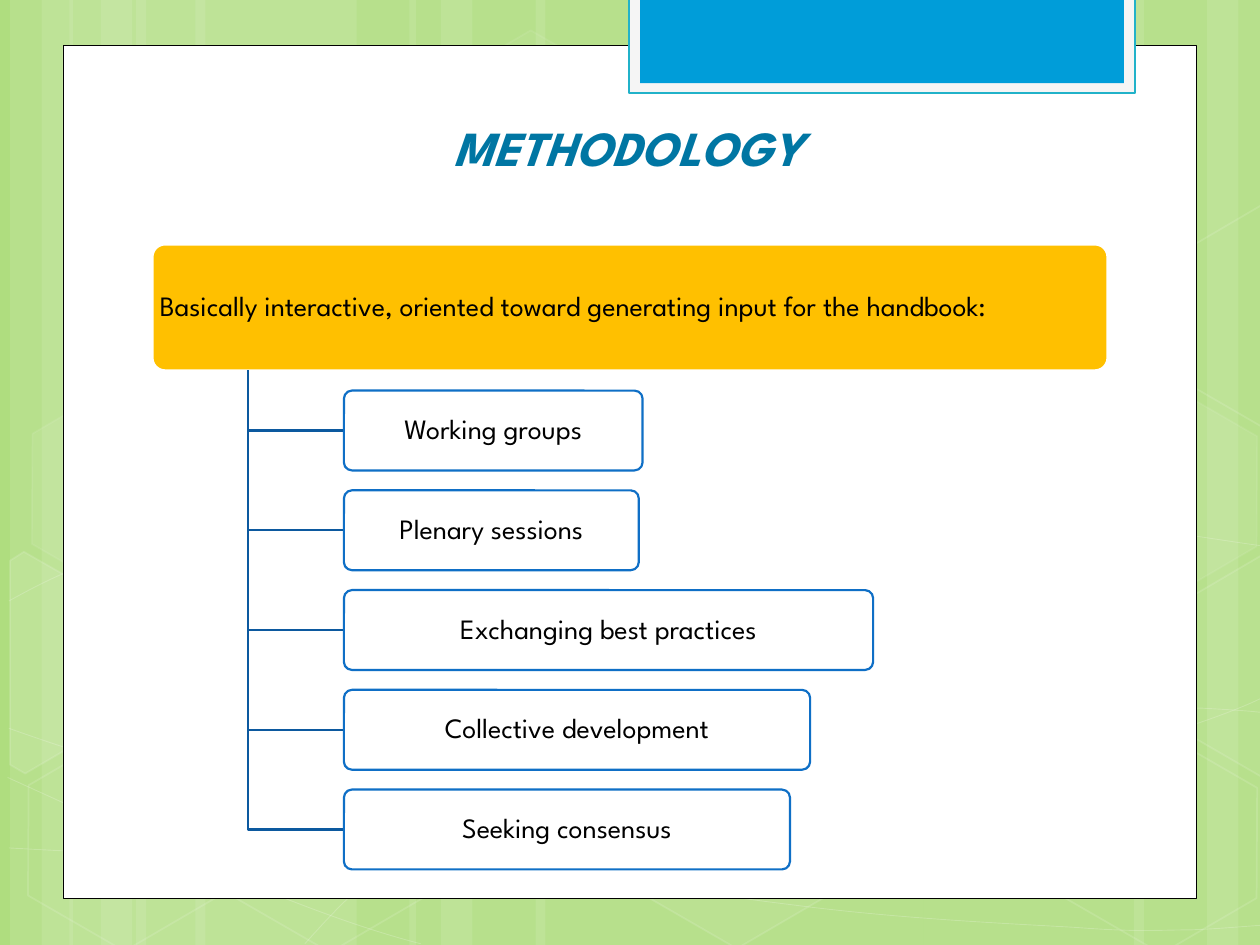
import pptx
import pptx.util
import pptx.dml.color
import pptx.enum.shapes
import pptx.enum.text
import pptx.oxml
import pptx.oxml.ns

Inches, Pt = pptx.util.Inches, pptx.util.Pt
RGB = pptx.dml.color.RGBColor.from_string
KIND = pptx.enum.shapes.MSO_SHAPE
ALIGN = pptx.enum.text.PP_ALIGN
ANCHOR = pptx.enum.text.MSO_ANCHOR
qn, nsdecls = pptx.oxml.ns.qn, pptx.oxml.ns.nsdecls

THEME = {
    "font": "League Spartan", "title_size": 28, "text_size": 16,
    "back": "AFDD7F", "white": "FFFFFF", "black": "000000",
    "tab": "F5F5F5", "tab_line": "21B2C9", "blue": "009DD9",
    "title": "0076A3", "gold": "FFC000", "edge": "0F6FC6", "link": "0C599F",
}


def paint(shape, fill=None, line=None, width=1, clear=(100, 100)):
    """Set fill and line by theme name; clear holds both opacities in percent."""
    shape.shadow.inherit = False
    for part, name, alpha in zip((shape.fill, shape.line.fill), (fill, line), clear):
        if name is None:
            part.background()
            continue
        part.solid()
        part.fore_color.rgb = RGB(THEME[name])
        if alpha < 100:
            color = part._xPr.find(qn("a:solidFill"))[0]
            color.append(pptx.oxml.parse_xml(
                f'<a:alpha {nsdecls("a")} val="{alpha * 1000}"/>'))
    if line:
        shape.line.width = Pt(width)


def trace(points, close=False):
    """Draw an outline through points given in inches."""
    spots = [(Inches(x), Inches(y)) for x, y in points]
    pen = shapes.build_freeform(*spots[0], scale=1.0)
    pen.add_line_segments(spots[1:], close=close)
    return pen.convert_to_shape()


deck = pptx.Presentation()
deck.slide_width, deck.slide_height = Inches(10), Inches(7.5)
slide = deck.slides.add_slide(deck.slide_layouts[5])
shapes = slide.shapes
slide.background.fill.solid()
slide.background.fill.fore_color.rgb = RGB(THEME["back"])

# Pale vertical bands: left, width
bands = [(1.08, 1.75), (0.08, 0.5), (0.33, 0.83), (1.55, 1.75), (0.55, 0.5),
         (0.8, 0.83), (7.33, 1.75), (9.58, 0.5), (9, 0.83), (4.25, 3.08),
         (3.25, 0.5), (3.5, 0.83)]
for left, width in bands:
    band = shapes.add_shape(KIND.RECTANGLE, Inches(left), 0, Inches(width), Inches(7.5))
    paint(band, "white", clear=(10, 100))

# Thin waves: a start point, then Bezier control points in threes
waves = [
    [(0.07, 6.73), (0.61, 6.76), (1.15, 6.79), (1.9, 6.78), (2.65, 6.77), (3.58, 6.75),
     (4.58, 6.65), (5.58, 6.55), (7, 6.36), (7.92, 6.17), (8.83, 5.98), (9.77, 5.68),
     (10.07, 5.51)],
    [(0.07, 4.77), (0.36, 4.61), (0.65, 4.46), (1.21, 4.31), (1.78, 4.16), (2.59, 3.94),
     (3.47, 3.87), (4.36, 3.8), (5.44, 3.79), (6.54, 3.87), (7.64, 3.95), (9.47, 4.26),
     (10.07, 4.34)],
    [(0.06, 6.17), (1.27, 6.72), (2.47, 7.27), (3.34, 7.49)],
    [(0.07, 5.78), (0.38, 5.89), (0.7, 6), (1.28, 6.16), (1.86, 6.31), (2.73, 6.56),
     (3.57, 6.73), (4.4, 6.9), (5.45, 7.08), (6.28, 7.18), (7.11, 7.29), (8, 7.33),
     (8.53, 7.36), (9.05, 7.4), (9.19, 7.38), (9.45, 7.38), (9.71, 7.37), (9.89, 7.35),
     (10.07, 7.34)],
    [(2.42, 7.49), (2.6, 7.29), (2.78, 7.09), (3.02, 6.91), (3.26, 6.73), (3.6, 6.53),
     (3.88, 6.39), (4.16, 6.25), (4.33, 6.19), (4.7, 6.09), (5.06, 5.99), (5.73, 5.85),
     (6.08, 5.78), (6.44, 5.71), (6.49, 5.71), (6.8, 5.69), (7.11, 5.66), (7.6, 5.63),
     (7.94, 5.62), (8.29, 5.61), (8.86, 5.62), (8.86, 5.62), (8.86, 5.62), (9.53, 5.62),
     (9.53, 5.62), (9.71, 5.63), (9.88, 5.64), (9.97, 5.65), (10.06, 5.66), (10.03, 5.65),
     (10.06, 5.66)],
]
for points in waves:
    wave = trace(points)
    paint(wave, line="white", width=0.5, clear=(100, 20))
    # Turn every three straight steps into one curve
    steps = list(wave._element.iter(qn("a:lnTo")))
    for i in range(0, len(steps), 3):
        curve = pptx.oxml.parse_xml(f'<a:cubicBezTo {nsdecls("a")}/>')
        steps[i].addprevious(curve)
        for step in steps[i:i + 3]:
            curve.append(step[0])
            step.getparent().remove(step)

# Hexagons: left, top, fill opacity, line opacity
cells = [(3.34, 0.36, 4, 8), (4.97, 5.89, 6, 12), (0.11, 5.91, 0, 12),
         (0.14, 3.12, 7, 8), (1.74, 5.92, 0, 12), (7.53, 4.53, 10, 12),
         (8.34, 5.93, 0, 12), (8.34, 3.14, 7, 8)]
for left, top, fill, line in cells:
    cell = shapes.add_shape(KIND.HEXAGON, Inches(left), Inches(top), Inches(1.75), Inches(1.52))
    cell.adjustments[0] = 0.285
    cell.rotation = 30
    paint(cell, "white" if fill else None, "white", clear=(fill, line))

# Hexagons cut by the slide edges: fill opacity, corners
cuts = [
    (10, [(0.08, 4.45), (0.19, 4.38), (0.96, 4.82), (0.95, 5.7), (0.2, 6.14), (0.08, 6.07)]),
    (4, [(9.26, 4.85), (10.01, 4.41), (10.09, 4.46), (10.09, 6.13), (10.02, 6.17), (9.26, 5.73)]),
    (0, [(9.26, 2.07), (10.01, 1.63), (10.1, 1.68), (10.09, 3.35), (10.02, 3.39), (9.26, 2.95)]),
]
for fill, points in cuts:
    paint(trace(points, True), "white" if fill else None, "white", clear=(fill, 12))

# White page and the tab on top of it
frames = [((0.5, 0.36, 9, 6.77), "white", "black", 0.5),
          ((4.99, -0.02, 4.02, 0.76), "tab", "tab_line", 1.25),
          ((5.08, -0.02, 3.84, 0.68), "blue", None, 0)]
for box, fill, line, width in frames:
    paint(shapes.add_shape(KIND.RECTANGLE, *map(Inches, box)), fill, line, width)

# Title, brought in front of the page
title = shapes.title
shapes._spTree.append(title._element)
title.left, title.top, title.width, title.height = map(Inches, (1.14, 0.88, 7.68, 0.57))
title.text_frame.text = "METHODOLOGY"
title.text_frame.vertical_anchor = ANCHOR.BOTTOM
head = title.text_frame.paragraphs[0]
head.alignment = ALIGN.CENTER
head.font.name, head.font.size = THEME["font"], Pt(THEME["title_size"])
head.font.bold = head.font.italic = True
head.font.color.rgb = RGB(THEME["title"])

# Tree: one root and its branches, a quarter of their height apart; text, width
ROOT, TRUNK, LEFT, TOP, HIGH = 2.94, 1.97, 2.73, 3.1, 1.9 / 3
PITCH = HIGH * 1.25
items = [("Working groups", 2.37), ("Plenary sessions", 2.34),
         ("Exchanging best practices", 4.2), ("Collective development", 3.7),
         ("Seeking consensus", 3.54)]
nodes = [("Basically interactive, oriented toward generating input for the handbook:",
          (1.21, 1.94, 7.58, 1), "gold", "white", 100, ALIGN.LEFT)]
for i, (text, width) in enumerate(items):
    nodes.append((text, (LEFT, TOP + i * PITCH, width, HIGH), "white", "edge", 90, ALIGN.CENTER))

for text, box, fill, line, alpha, align in nodes:
    if box[0] == LEFT:
        mid = box[1] + HIGH / 2
        paint(trace([(TRUNK, ROOT), (TRUNK, mid), (LEFT, mid)]), line="link", width=1.25)
    node = shapes.add_shape(KIND.ROUNDED_RECTANGLE, *map(Inches, box))
    node.adjustments[0] = 0.1
    paint(node, fill, line, 1.25, (alpha, 100))
    frame = node.text_frame
    frame.text, frame.word_wrap = text, True
    frame.vertical_anchor = ANCHOR.MIDDLE
    frame.margin_left = frame.margin_right = Inches(0.03)
    frame.margin_top = frame.margin_bottom = Inches(0.02)
    para = frame.paragraphs[0]
    para.alignment, para.line_spacing = align, 0.9
    para.font.name, para.font.size = THEME["font"], Pt(THEME["text_size"])
    para.font.color.rgb = RGB(THEME["black"])

deck.save("out.pptx")
